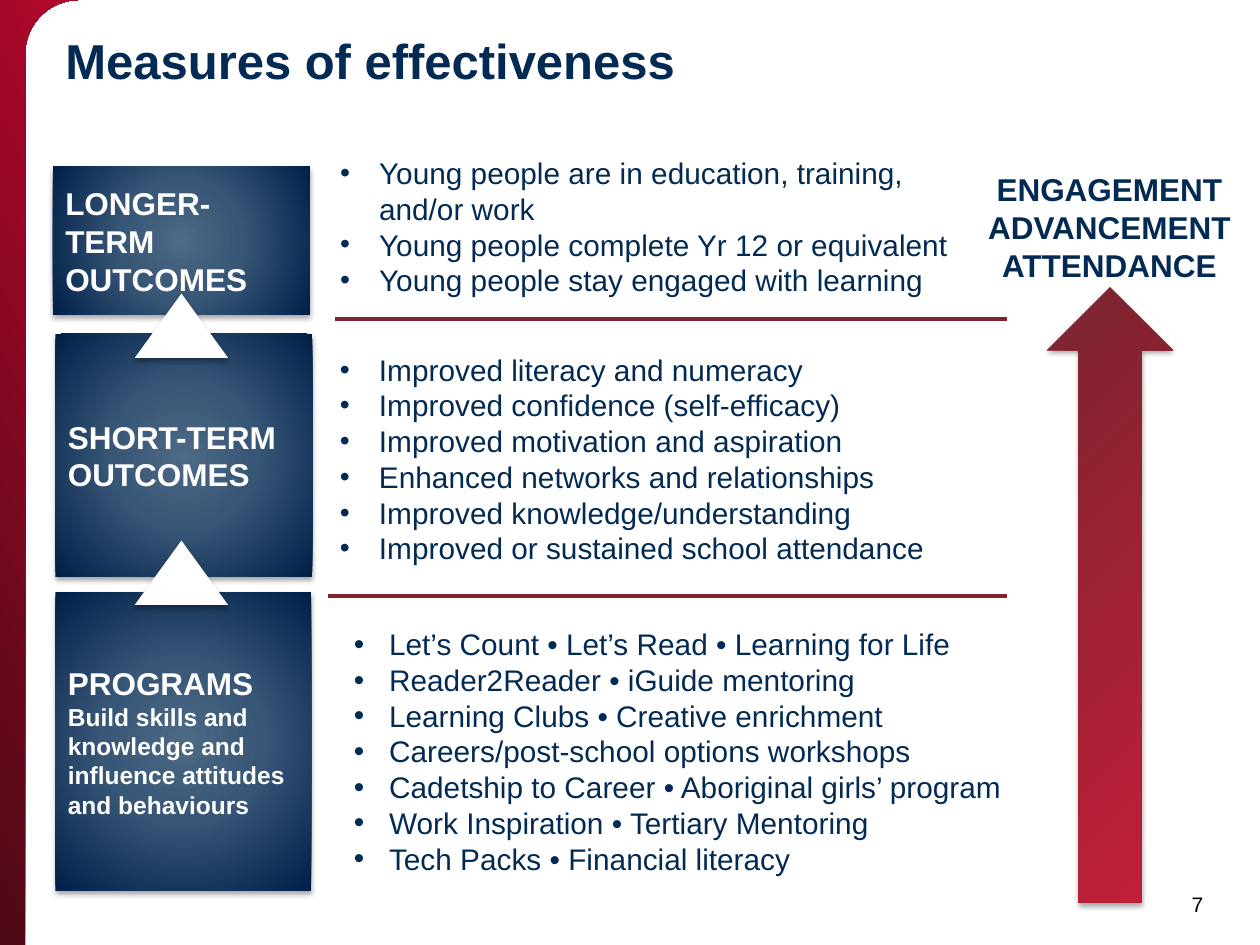
from math import cos, sin, pi
from lxml.etree import SubElement
from pptx import Presentation
from pptx.dml.color import RGBColor
from pptx.enum.shapes import MSO_CONNECTOR, MSO_SHAPE
from pptx.enum.text import MSO_ANCHOR, PP_ALIGN
from pptx.oxml import parse_xml
from pptx.oxml.ns import nsdecls, qn
from pptx.util import Inches, Pt

INK = {"navy": "032A53", "white": "FFFFFF", "black": "000000", "rule": "7E2430"}
BLUE = [(0, "4C6986"), (41, "385676"), (100, "00204A")]
RED = [(0, "79242F"), (100, "C31F39")]
WINE = [(0, "4D0916"), (100, "B4082B")]

TITLE = "Measures of effectiveness"
STAGES = [
    ((0.44, 4.7, 2.03, 2.37), [
        ("PROGRAMS", 18),
        ("Build skills and knowledge and influence attitudes and behaviours", 14)]),
    ((0.44, 2.65, 2.04, 1.93), [("SHORT-TERM OUTCOMES", 18)]),
    ((0.42, 1.32, 2.04, 1.18), [("LONGER-TERM OUTCOMES", 18)]),
]
LISTS = [
    ((2.71, 4.92, 5.93, 2.1), 0.28, 100, [
        "Let’s Count • Let’s Read • Learning for Life",
        "Reader2Reader • iGuide mentoring",
        "Learning Clubs • Creative enrichment",
        "Careers/post-school options workshops",
        "Cadetship to Career • Aboriginal girls’ program",
        "Work Inspiration • Tertiary Mentoring",
        "Tech Packs • Financial literacy"]),
    ((2.6, 2.74, 5, 1.82), 0.31, 95, [
        "Improved literacy and numeracy",
        "Improved confidence (self-efficacy)",
        "Improved motivation and aspiration",
        "Enhanced networks and relationships",
        "Improved knowledge/understanding",
        "Improved or sustained school attendance"]),
    ((2.6, 1.18, 5.39, 1.24), 0.31, 95, [
        "Young people are in education, training, and/or work",
        "Young people complete Yr 12 or equivalent",
        "Young people stay engaged with learning"]),
]
GOALS = ["ENGAGEMENT", "ADVANCEMENT", "ATTENDANCE"]
RULES = [(2.6, 4.73), (2.66, 2.53)]
TIPS = [4.29, 2.33]
EDGE, BEND = 0.2, 0.43

deck = Presentation()
deck.slide_width, deck.slide_height = Inches(10), Inches(7.5)
slide = deck.slides.add_slide(deck.slide_layouts[6])
shapes = slide.shapes


def color(name):
    return RGBColor.from_string(INK[name])


def blend(shape, stops, angle=None):
    marks = "".join(
        f'<a:gs pos="{pos * 1000}"><a:srgbClr val="{tone}"/></a:gs>' for pos, tone in stops)
    if angle is None:
        way = ('<a:path path="circle"><a:fillToRect l="50000" t="50000" '
               'r="50000" b="50000"/></a:path>')
    else:
        way = f'<a:lin ang="{angle * 60000}" scaled="0"/>'
    shape.fill.background()
    old = shape._element.spPr.find(qn("a:noFill"))
    old.getparent().replace(old, parse_xml(
        f'<a:gradFill {nsdecls("a")} rotWithShape="1"><a:gsLst>{marks}</a:gsLst>{way}</a:gradFill>'))


def shade(shape):
    glow = shape._element.spPr.find(qn("a:effectLst"))
    glow.append(parse_xml(
        f'<a:outerShdw {nsdecls("a")} blurRad="{Pt(3.1)}" dist="{Pt(1.8)}" dir="5400000" '
        'rotWithShape="0"><a:srgbClr val="000000"><a:alpha val="35000"/></a:srgbClr></a:outerShdw>'))


def solid(kind, area):
    shape = shapes.add_shape(kind, *map(Inches, area))
    shape.shadow.inherit = False
    shape.line.fill.background()
    shade(shape)
    return shape


def write(shape, rows, tone, bold=False, align=PP_ALIGN.LEFT, hang=0, dot=100):
    frame = shape.text_frame
    frame.word_wrap = True
    for i, (words, size) in enumerate(rows):
        para = frame.paragraphs[0] if i == 0 else frame.add_paragraph()
        para.alignment = align
        if hang:
            props = para._p.get_or_add_pPr()
            props.set("marL", str(Inches(hang)))
            props.set("indent", str(-Inches(hang)))
            SubElement(props, qn("a:buSzPct"), val=str(dot * 1000))
            SubElement(props, qn("a:buFont"), typeface="Arial")
            SubElement(props, qn("a:buChar"), char="•")
        run = para.add_run()
        run.text = words
        font = run.font
        font.name, font.size, font.bold = "Arial", Pt(size), bold
        font.color.rgb = color(tone)


def label(area, rows, tone, **style):
    box = shapes.add_textbox(*map(Inches, area))
    write(box, rows, tone, **style)
    return box


arc = [(EDGE + BEND * (1 - sin(t)), BEND * (1 - cos(t)))
       for t in (pi / 2 * n / 24 for n in range(25))]
rim = [(Inches(x), Inches(y)) for x, y in arc + [(EDGE, 7.5), (0, 7.5)]]
pen = shapes.build_freeform(0, 0)
pen.add_line_segments(rim, close=True)
side = pen.convert_to_shape()
side.shadow.inherit = False
side.line.fill.background()
blend(side, WINE, 334)

label((9.36, 7.03, 0.45, 0.3), [("7", 12)], "black")

for area, rows in STAGES:
    card = solid(MSO_SHAPE.RECTANGLE, area)
    blend(card, BLUE)
    card.text_frame.vertical_anchor = MSO_ANCHOR.MIDDLE
    write(card, rows, "white", bold=True)

head = label((0.52, 0.24, 7.27, 1.25), [(TITLE, 28)], "navy", bold=True).text_frame
head.margin_left = head.margin_right = head.margin_top = head.margin_bottom = 0

for area, hang, dot, items in LISTS:
    label(area, [(item, 17) for item in items], "navy", hang=hang, dot=dot)

label((7.73, 1.3, 2.15, 1.01), [(goal, 18) for goal in GOALS], "navy",
      bold=True, align=PP_ALIGN.CENTER)

for left, top in RULES:
    rule = shapes.add_connector(
        MSO_CONNECTOR.STRAIGHT, *map(Inches, (left, top, 7.99, top)))
    rule.line.color.rgb = color("rule")
    rule.line.width = Pt(2)
    SubElement(rule._element.spPr, qn("a:effectLst"))

blend(solid(MSO_SHAPE.UP_ARROW, (8.31, 2.28, 1, 4.88)), RED, 45)

for top in TIPS:
    tip = solid(MSO_SHAPE.ISOSCELES_TRIANGLE, (1.07, top, 0.74, 0.51))
    tip.fill.solid()
    tip.fill.fore_color.rgb = color("white")

deck.save("out.pptx")
